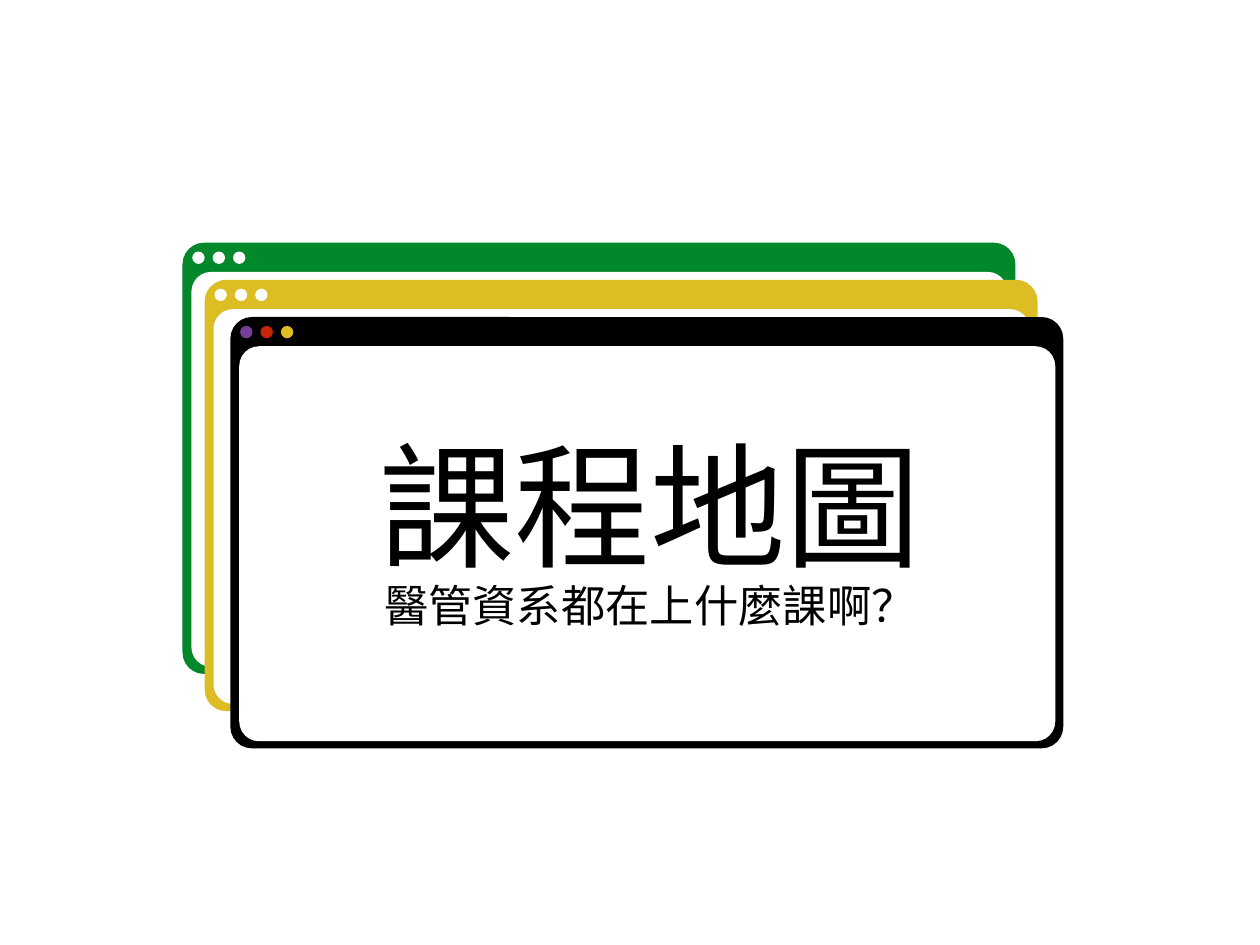
from lxml import etree
from pptx import Presentation
from pptx.dml.color import RGBColor
from pptx.enum.shapes import MSO_SHAPE as SHAPE
from pptx.enum.text import MSO_ANCHOR as ANCHOR, PP_ALIGN as ALIGN
from pptx.oxml.ns import qn
from pptx.util import Emu, Pt

PX = 9144  # 100 px to the inch
FONT = "Noto Sans CJK SC"
BLACK, WHITE, GREEN, YELLOW = "000000", "FFFFFF", "00882B", "DCBD23"
PURPLE, RED = "773F9B", "C82506"


def px(*lengths):
    return [Emu(n * PX) for n in lengths]


def color(hex_string):
    return RGBColor.from_string(hex_string)


def add_filled(s, kind, box, fill, radius=None):
    sp = s.shapes.add_shape(kind, *px(*box))
    sp.shadow.inherit = False
    sp.fill.solid()
    sp.fill.fore_color.rgb = color(fill)
    sp.line.fill.background()
    if radius is not None:
        sp.adjustments[0] = radius


def add_window(s, box, frame, dots):
    """Browser window: coloured frame, white page and three title-bar dots."""
    x, y, w, h = box
    add_filled(s, SHAPE.ROUNDED_RECTANGLE, box, frame, 0.05)
    page = (x + 10, y + 33, w - 19, h - 41)
    add_filled(s, SHAPE.ROUNDED_RECTANGLE, page, WHITE, 0.05)
    for i, dot in enumerate(dots):
        add_filled(s, SHAPE.OVAL, (x + 11 + 23 * i, y + 10, 14, 14), dot)


def add_label(s, box, text, size):
    tf = s.shapes.add_textbox(*px(*box)).text_frame
    tf.word_wrap = False
    tf.vertical_anchor = ANCHOR.MIDDLE
    tf.margin_left = tf.margin_right = tf.margin_top = tf.margin_bottom = px(6)[0]
    p = tf.paragraphs[0]
    p.alignment = ALIGN.CENTER
    r = p.add_run()
    r.text = text
    r.font.size = Pt(size)
    r.font.name = FONT
    r.font.color.rgb = color(BLACK)
    etree.SubElement(r.font._element, qn("a:ea"), typeface=FONT)


def add_title_slide(prs):
    s = prs.slides.add_slide(prs.slide_layouts[6])
    s.background.fill.solid()
    s.background.fill.fore_color.rgb = color(WHITE)
    windows = [
        (206, 274, GREEN, [WHITE] * 3),
        (231, 316, YELLOW, [WHITE] * 3),
        (260, 358, BLACK, [PURPLE, RED, YELLOW]),
    ]
    for x, y, frame, dots in windows:
        add_window(s, (x, y, 940, 487), frame, dots)
    add_label(s, (420, 470, 628, 196), "課程地圖", 110)
    add_label(s, (425, 647, 617, 72), "醫管資系都在上什麼課啊？", 36)


def main():
    prs = Presentation()
    prs.slide_width, prs.slide_height = px(1422, 1067)
    add_title_slide(prs)
    prs.save("out.pptx")


if __name__ == "__main__":
    main()
